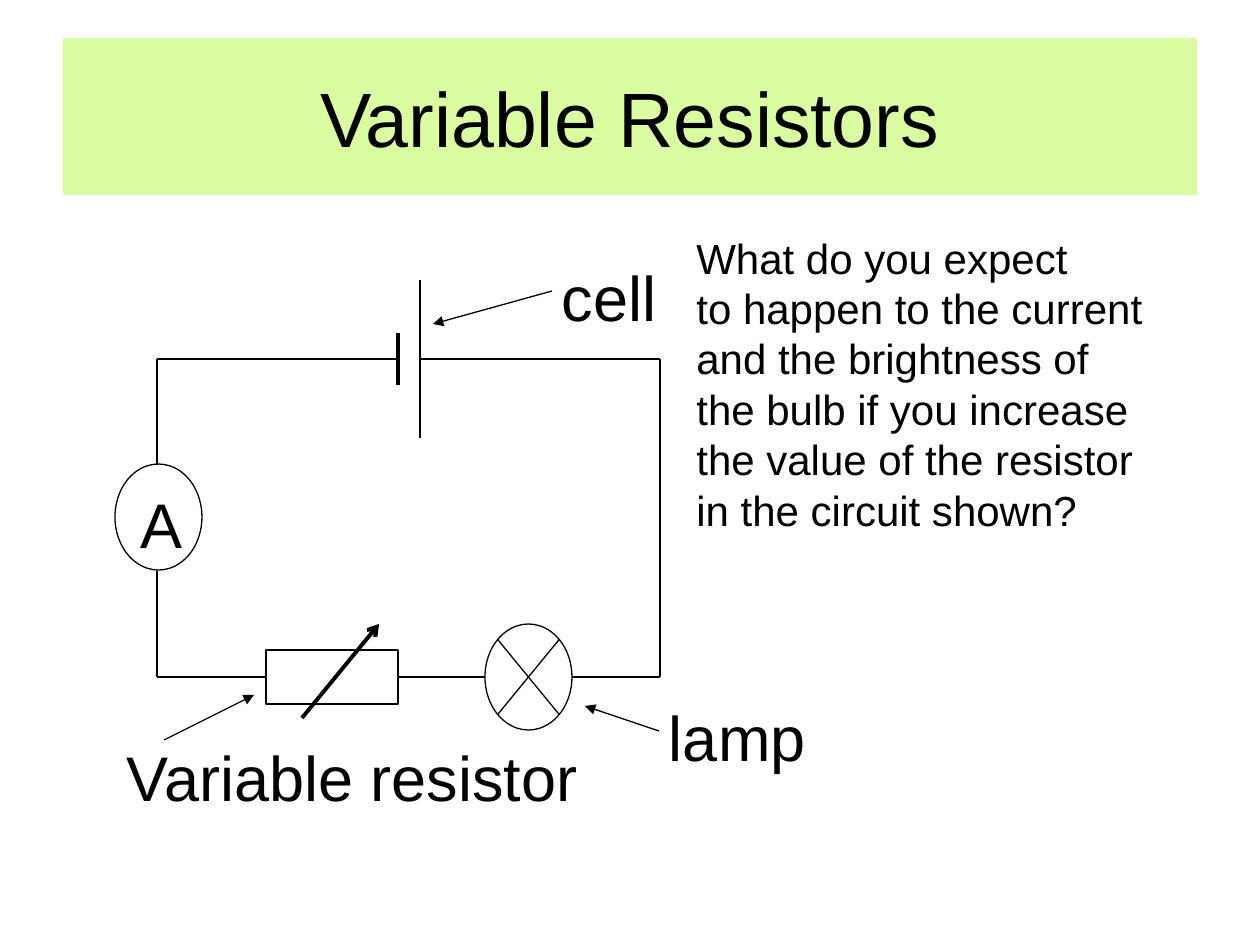
"""Build a slide asking how a variable resistor affects a lamp circuit."""
from dataclasses import dataclass

from lxml.etree import SubElement
from pptx import Presentation
from pptx.dml.color import RGBColor
from pptx.enum.shapes import MSO_CONNECTOR as Connector, MSO_SHAPE as Shape
from pptx.enum.text import MSO_ANCHOR as Anchor, MSO_AUTO_SIZE as AutoSize, PP_ALIGN as Align
from pptx.oxml.ns import qn
from pptx.util import Emu, Pt


@dataclass(frozen=True)
class Theme:
    font: str = "Arial"
    ink: RGBColor = RGBColor(0, 0, 0)
    paper: RGBColor = RGBColor(255, 255, 255)
    banner: RGBColor = RGBColor(0xDA, 0xFD, 0xA1)
    title: Pt = Pt(44)
    label: Pt = Pt(36)
    body: Pt = Pt(24)
    thin: Pt = Pt(0.75)
    thick: Pt = Pt(2.25)


THEME = Theme()
PX = 914400 / 126


def px(*lengths):
    return [Emu(round(length * PX)) for length in lengths]


def write(frame, text, size, align=Align.LEFT):
    frame.text = text
    for paragraph in frame.paragraphs:
        paragraph.alignment = align
        for run in paragraph.runs:
            run.font.name = THEME.font
            run.font.size = size
            run.font.color.rgb = THEME.ink


prs = Presentation()
prs.slide_width, prs.slide_height = px(1260, 945)
slide = prs.slides.add_slide(prs.slide_layouts[5])
shapes = slide.shapes

title = shapes.title
title.left, title.top, title.width, title.height = px(63, 38, 1134, 157)
title.fill.solid()
title.fill.fore_color.rgb = THEME.banner
title.text_frame.vertical_anchor = Anchor.MIDDLE
write(title.text_frame, "Variable Resistors", THEME.title, Align.CENTER)

# Circuit
left, right, top, bottom = 157, 660, 359, 677
cell_short, cell_long = 398, 420
resistor_left, resistor_right = 266, 398
lamp_left = 485
bulb_width, bulb_height = 87, 106

resistor = shapes.add_shape(
    Shape.RECTANGLE, *px(resistor_left, bottom - 27, resistor_right - resistor_left, 54))

strokes = [
    ((cell_short, top), (left, top), THEME.thin, None),
    ((cell_long, top), (right, top), THEME.thin, None),
    ((right, bottom), (right, top), THEME.thin, None),
    ((left, top), (left, 465), THEME.thin, None),
    ((left, 571), (left, bottom), THEME.thin, None),
    ((551, bottom), (right, bottom), THEME.thin, None),
    ((left, bottom), (resistor_left, bottom), THEME.thin, None),
    ((resistor_right, bottom), (lamp_left, bottom), THEME.thin, None),
    ((cell_short, top - 26), (cell_short, top + 26), THEME.thick, None),
    ((cell_long, top - 79), (cell_long, top + 79), THEME.thin, None),
    ((659, 731), (585, 706), THEME.thin, "triangle"),
    ((552, 291), (433, 324), THEME.thin, "triangle"),
    ((164, 740), (254, 695), THEME.thin, "triangle"),
    ((302, 718), (379, 624), THEME.thick, "arrow"),
]
for start, end, weight, head in strokes:
    stroke = shapes.add_connector(Connector.STRAIGHT, *px(*start, *end))
    stroke.line.color.rgb = THEME.ink
    stroke.line.width = weight
    if head:
        SubElement(stroke.line._get_or_add_ln(), qn("a:tailEnd"), type=head)
    SubElement(stroke._element.spPr, qn("a:effectLst"))
    if end == (resistor_left, bottom):
        stroke.end_connect(resistor, 1)
    if start == (resistor_right, bottom):
        stroke.begin_connect(resistor, 3)

lamp = shapes.add_shape(
    Shape.FLOWCHART_SUMMING_JUNCTION,
    *px(lamp_left, bottom - bulb_height // 2, bulb_width, bulb_height))
ammeter = shapes.add_shape(Shape.OVAL, *px(115, 464, bulb_width, bulb_height))
for component in (resistor, lamp, ammeter):
    component.shadow.inherit = False
    component.fill.solid()
    component.fill.fore_color.rgb = THEME.paper
    component.line.color.rgb = THEME.ink
    component.line.width = THEME.thin
ammeter.fill.background()
ammeter.text_frame.vertical_anchor = Anchor.TOP
write(ammeter.text_frame, "A", THEME.label)

for name, *box in (
    ("lamp", 639, 692, 179, 88),
    ("cell", 532, 252, 137, 88),
    ("Variable resistor", 97, 732, 498, 89),
):
    label = shapes.add_textbox(*px(*box)).text_frame
    label.word_wrap = False
    label.auto_size = AutoSize.SHAPE_TO_FIT_TEXT
    label.margin_left = px(30)[0]
    write(label, name, THEME.label)

question = shapes.add_textbox(*px(684, 226, 479, 318)).text_frame
question.word_wrap = True
question.auto_size = AutoSize.SHAPE_TO_FIT_TEXT
write(
    question,
    "What do you expect\n"
    "to happen to the current and the brightness of the bulb "
    "if you increase the value of the resistor in the circuit shown?",
    THEME.body)

prs.save("out.pptx")
